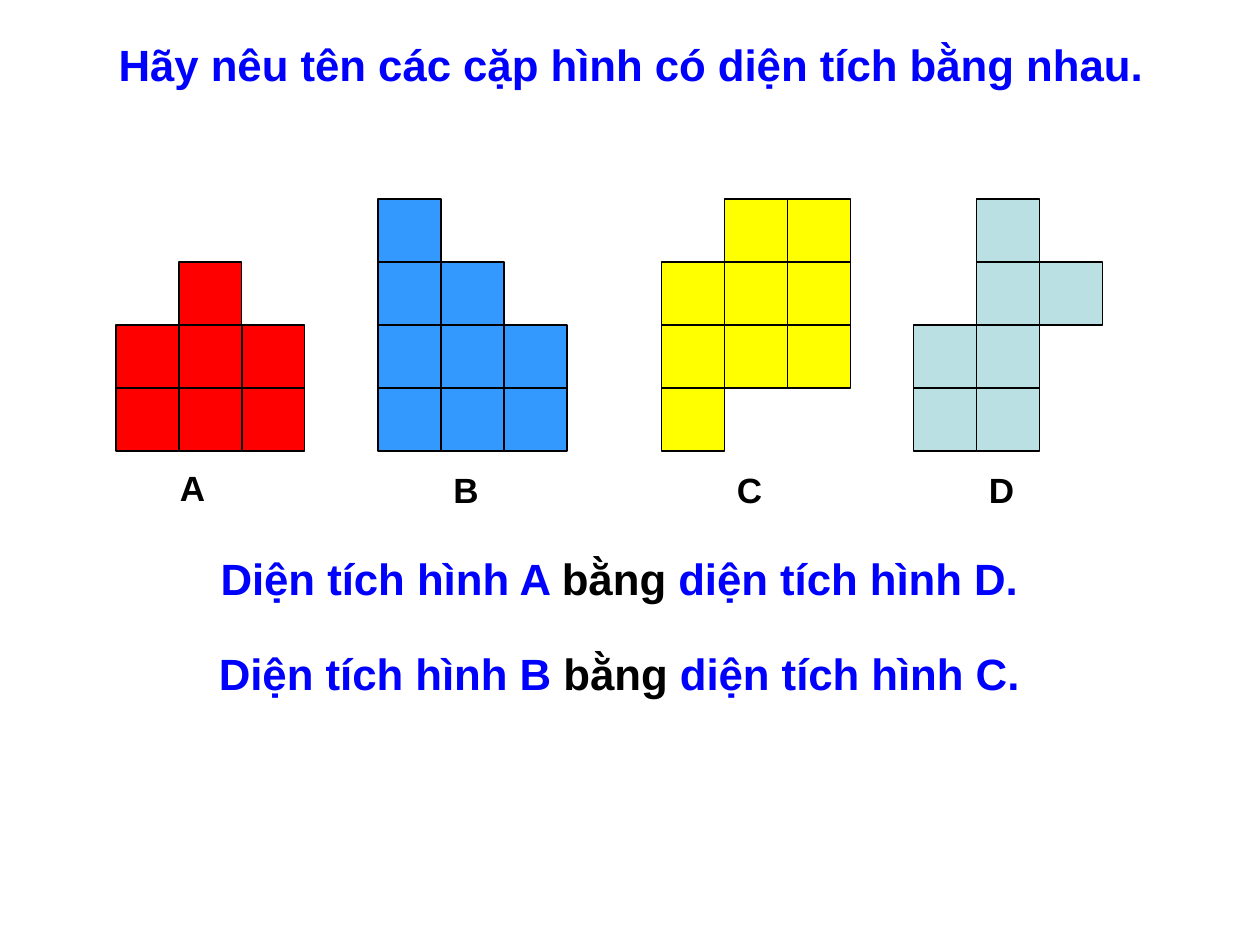
from dataclasses import dataclass

from pptx import Presentation
from pptx.dml.color import RGBColor
from pptx.enum import text as t
from pptx.enum.shapes import MSO_SHAPE
from pptx.util import Inches, Pt


@dataclass(frozen=True)
class Theme:
    font: str = "Arial"
    blue: str = "0000FF"
    black: str = "000000"
    sentence_size: int = 25
    label_size: int = 20
    outline: float = 0.75


THEME = Theme()
CELL = 0.5
SENTENCE_BOX = (9.17, 0.52)
LABEL_BOX = (0.67, 0.43)

# Name, fill, left, top, rows of unit squares, label offset (left, top)
FIGURES = [
    ("A", "FF0000", 0.92, 2.08, [".#.", "###", "###"], (0.41, 1.57)),
    ("B", "3399FF", 3.0, 1.58, ["#..", "##.", "###", "###"], (0.5, 2.09)),
    ("C", "FFFF00", 5.25, 1.58, [".##", "###", "###", "#.."], (0.5, 2.09)),
    ("D", "BBE0E3", 7.25, 1.58, [".#.", ".##", "##.", "##."], (0.5, 2.09)),
]
ANSWERS = [("A", "D", 4.33), ("B", "C", 5.08)]


def write_text(shape, runs, size, align=t.PP_ALIGN.CENTER):
    """Fill a shape with one paragraph of (text, colour) runs."""
    frame = shape.text_frame
    frame.word_wrap = True
    frame.auto_size = t.MSO_AUTO_SIZE.SHAPE_TO_FIT_TEXT
    frame.vertical_anchor = t.MSO_ANCHOR.TOP
    paragraph = frame.paragraphs[0]
    paragraph.alignment = align
    for words, colour in runs:
        run = paragraph.add_run()
        run.text = words
        run.font.name = THEME.font
        run.font.size = Pt(size)
        run.font.bold = True
        run.font.color.rgb = RGBColor.from_string(colour)


def place_title(slide, left, top, width, height):
    title = slide.shapes.title
    title.left, title.top = Inches(left), Inches(top)
    title.width, title.height = Inches(width), Inches(height)
    question = "Hãy nêu tên các cặp hình có diện tích bằng nhau."
    write_text(title, [(question, THEME.blue)], THEME.sentence_size)


def add_figure(slide, name, fill, left, top, rows, label_offset):
    """Group the unit squares of one figure with its letter."""
    group = slide.shapes.add_group_shape().shapes
    for row, marks in enumerate(rows):
        for column, mark in enumerate(marks):
            if mark != "#":
                continue
            square = group.add_shape(
                MSO_SHAPE.RECTANGLE,
                Inches(left + column * CELL), Inches(top + row * CELL),
                Inches(CELL), Inches(CELL))
            square.shadow.inherit = False
            square.fill.solid()
            square.fill.fore_color.rgb = RGBColor.from_string(fill)
            square.line.color.rgb = RGBColor.from_string(THEME.black)
            square.line.width = Pt(THEME.outline)
    dx, dy = label_offset
    label = group.add_textbox(Inches(left + dx), Inches(top + dy),
                              *map(Inches, LABEL_BOX))
    write_text(label, [(name, THEME.black)], THEME.label_size,
               align=t.PP_ALIGN.LEFT)


def add_answer(slide, first, second, left, top, width, height):
    answer = slide.shapes.add_textbox(Inches(left), Inches(top),
                                      Inches(width), Inches(height))
    write_text(answer, [(f"Diện tích hình {first} ", THEME.blue),
                        ("bằng", THEME.black),
                        (f" diện tích hình {second}.", THEME.blue)],
               THEME.sentence_size)


def main():
    deck = Presentation()
    deck.slide_width, deck.slide_height = Inches(10), Inches(7.5)
    slide = deck.slides.add_slide(deck.slide_layouts[5])
    place_title(slide, 0.42, 0.25, *SENTENCE_BOX)
    for figure in FIGURES:
        add_figure(slide, *figure)
    for first, second, top in ANSWERS:
        add_answer(slide, first, second, 0.33, top, *SENTENCE_BOX)
    deck.save("out.pptx")


if __name__ == "__main__":
    main()
